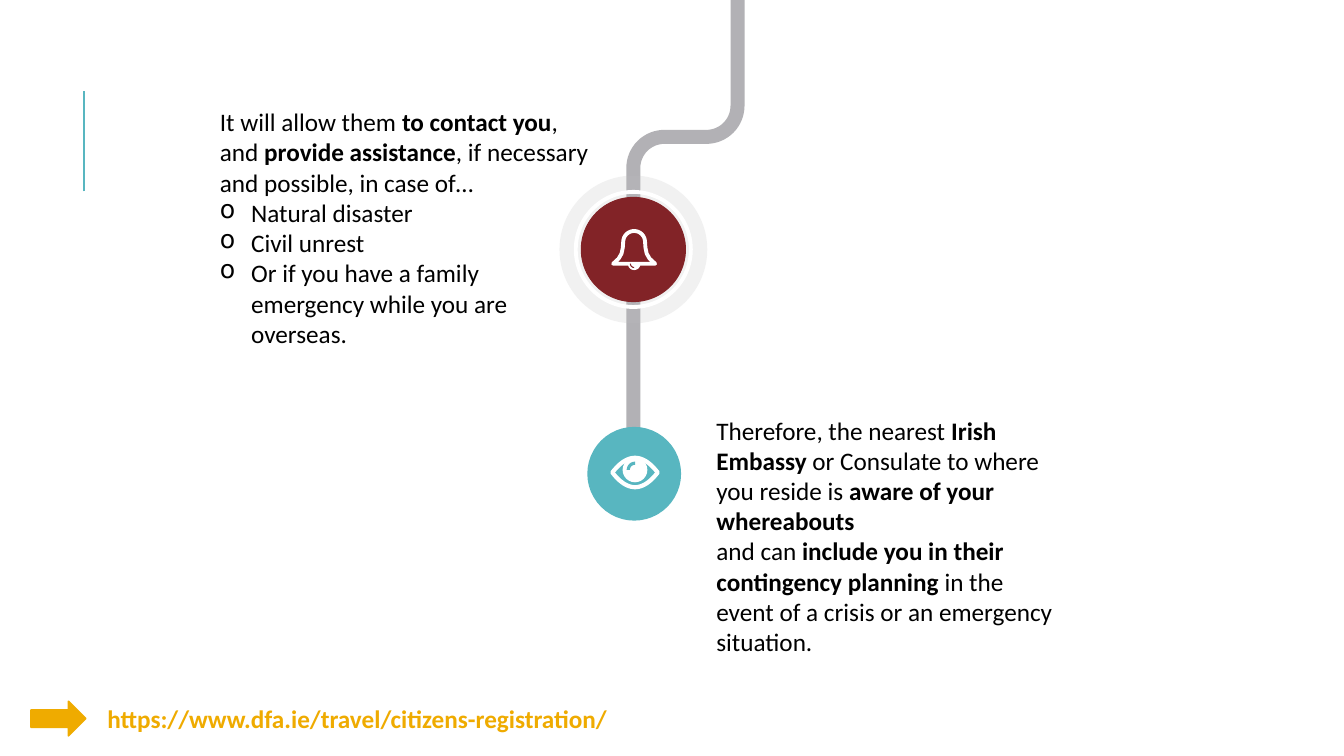
import math
from dataclasses import dataclass
from typing import Optional

import pptx
import pptx.dml.color
import pptx.enum.shapes
import pptx.enum.text
import pptx.oxml.ns
import pptx.util
from lxml import etree

Point = tuple[float, float]
SHAPE = pptx.enum.shapes.MSO_SHAPE
qn = pptx.oxml.ns.qn

COLORS = {
    "road": "B2B1B5", "teal": "58B6C0", "maroon": "822327", "halo": "BFBFBF",
    "white": "FFFFFF", "gold": "EFAB00", "black": "000000",
}
COLS, ROWS = 160, 90
CELL = pptx.util.Inches(13.333) / COLS
SPINE = 75.4
BELL_Y, EYE_Y = 29.7, 56.4

prs = pptx.Presentation()
prs.slide_width = round(COLS * CELL)
prs.slide_height = round(ROWS * CELL)
s = prs.slides.add_slide(prs.slide_layouts[6])


@dataclass
class Disc:
    x: float
    y: float
    size: float
    fill: Optional[str] = None
    line: Optional[str] = None
    width: float = 0
    alpha: Optional[int] = None


@dataclass
class Stroke:
    points: list[Point]
    line: Optional[str] = None
    width: float = 0
    fill: Optional[str] = None
    close: bool = False


@dataclass
class Note:
    box: tuple[float, float, float, float]
    paragraphs: list[list[tuple[str, bool]]]
    bullets: tuple[str, ...] = ()
    color: str = "black"
    wrap: bool = True


def grid(value: float) -> int:
    return round(value * CELL)


def rgb(name: str) -> pptx.dml.color.RGBColor:
    return pptx.dml.color.RGBColor.from_string(COLORS[name])


def paint(sp, fill: Optional[str], line: Optional[str], width: float) -> None:
    sp.shadow.inherit = False
    if fill:
        sp.fill.solid()
        sp.fill.fore_color.rgb = rgb(fill)
    else:
        sp.fill.background()
    if line:
        sp.line.color.rgb = rgb(line)
        sp.line.width = pptx.util.Pt(width)
    else:
        sp.line.fill.background()


def draw_disc(disc: Disc) -> None:
    left, top = disc.x - disc.size / 2, disc.y - disc.size / 2
    sp = s.shapes.add_shape(SHAPE.OVAL, *map(grid, (left, top, disc.size, disc.size)))
    paint(sp, disc.fill, disc.line, disc.width)
    if disc.alpha is not None:
        color = sp.fill._xPr.find(qn("a:solidFill"))[0]
        etree.SubElement(color, qn("a:alpha"), val=str(disc.alpha * 1000))


def draw_stroke(stroke: Stroke) -> None:
    points = [(grid(x), grid(y)) for x, y in stroke.points]
    builder = s.shapes.build_freeform(*points[0])
    builder.add_line_segments(points[1:], close=stroke.close)
    paint(builder.convert_to_shape(), stroke.fill, stroke.line, stroke.width)


def arc(x: float, y: float, radius: float, start: int, end: int) -> list[Point]:
    """Points on a circle; angles in degrees, clockwise from the right."""
    angles = [math.radians(start + (end - start) * i / 16) for i in range(17)]
    return [(x + radius * math.cos(a), y + radius * math.sin(a)) for a in angles]


def add_run(p, text: str, *, bold: bool = False, color: str = "black",
            size: float = 18, font: str = "Calibri") -> None:
    r = p.add_run()
    r.text = text
    r.font.name, r.font.size, r.font.bold = font, pptx.util.Pt(size), bold
    r.font.color.rgb = rgb(color)


def draw_note(note: Note) -> None:
    tf = s.shapes.add_textbox(*map(grid, note.box)).text_frame
    tf.word_wrap = note.wrap
    tf.auto_size = pptx.enum.text.MSO_AUTO_SIZE.SHAPE_TO_FIT_TEXT
    rows = note.paragraphs + [[(text, False)] for text in note.bullets]
    for i, row in enumerate(rows):
        p = tf.add_paragraph() if i else tf.paragraphs[0]
        for text, bold in row:
            add_run(p, text, bold=bold, color=note.color)
        if i >= len(note.paragraphs):
            pPr = p._p.get_or_add_pPr()
            indent = pptx.util.Inches(0.31)
            pPr.set("marL", str(indent))
            pPr.set("indent", str(-indent))
            etree.SubElement(pPr, qn("a:buChar"), char="o")


def draw_road() -> None:
    right, bend, radius = 87.8, 16.3, 3.7
    draw_stroke(Stroke(
        [(right, 0)]
        + arc(right - radius, bend - radius, radius, 0, 90)
        + arc(SPINE + radius, bend + radius, radius, 270, 180)
        + [(SPINE, EYE_Y)], "road", 10))


def draw_bell() -> None:
    x, shoulder, rim = 75.5, 28.8, 31.4
    side = [(1.35, 29.5), (1.5, 30.2), (1.85, 30.8), (2.5, rim)]
    outline = ([(x - dx, y) for dx, y in reversed(side)]
               + arc(x, shoulder, 1.3, 180, 360)
               + [(x + dx, y) for dx, y in side])
    draw_stroke(Stroke(outline, "white", 2.75, close=True))
    draw_stroke(Stroke(arc(x, rim, 0.75, 0, 180), fill="white", close=True))
    draw_stroke(Stroke(arc(x, rim, 0.45, 90, 180), "maroon", 0.75))


def draw_eye() -> None:
    x, y, half_width, half_height = 75.6, 56.25, 2.7, 1.75
    steps = [i / 12 for i in range(-12, 13)]
    lid = [(x + half_width * t, half_height * (1 - t * t)) for t in steps]
    outline = [(px, y - h) for px, h in lid] + [(px, y + h) for px, h in lid[-2:0:-1]]
    draw_stroke(Stroke(outline, "white", 3, close=True))
    draw_disc(Disc(x, y - 0.3, 2.95, "white"))
    draw_stroke(Stroke(arc(x, y - 0.3, 0.8, 180, 270), "teal", 2.25))


def draw_accent_line() -> None:
    line = s.shapes.add_connector(pptx.enum.shapes.MSO_CONNECTOR.STRAIGHT,
                                  *map(grid, (10, 22.8, 10, 10.8)))
    line.line.color.rgb = rgb("teal")
    line.line.width = pptx.util.Pt(1.5)
    etree.SubElement(line._element.spPr, qn("a:effectLst"))


DISCS = [
    Disc(SPINE, BELL_Y, 17.6, "halo", alpha=21),
    Disc(SPINE, BELL_Y, 13.7, line="white", width=2.75),
    Disc(SPINE, BELL_Y, 12.4, "maroon", "maroon", 0.75),
    Disc(SPINE + 0.1, EYE_Y, 9.7, "teal", "teal", 8.75),
]
NOTES = [
    Note((25, 12.1, 46.8, 30.2),
         [[("It will allow them ", False), ("to contact you", True), (", and ", False),
           ("provide assistance", True),
           (", if necessary and possible, in case of…", False)]],
         ("Natural disaster", "Civil unrest",
          "Or if you have a family emergency while you are overseas.")),
    Note((84.1, 48.8, 44, 30.2),
         [[("Therefore, the nearest ", False), ("Irish Embassy ", True),
           ("or Consulate to where you reside is ", False),
           ("aware of your whereabouts", True)],
          [("and can ", False), ("include you in their contingency planning", True),
           (" in the event of a crisis or an emergency situation.", False)]]),
    Note((11.6, 83.2, 62.4, 4.8),
         [[("https://www.dfa.ie/travel/citizens-registration/", True)]],
         color="gold", wrap=False),
]

draw_accent_line()
draw_road()
for disc in DISCS:
    draw_disc(disc)
draw_bell()
draw_eye()
for note in NOTES:
    draw_note(note)
arrow = s.shapes.add_shape(SHAPE.RIGHT_ARROW, *map(grid, (3.7, 83.5, 6.5, 4.1)))
paint(arrow, "gold", "gold", 1.25)
prs.save("out.pptx")
